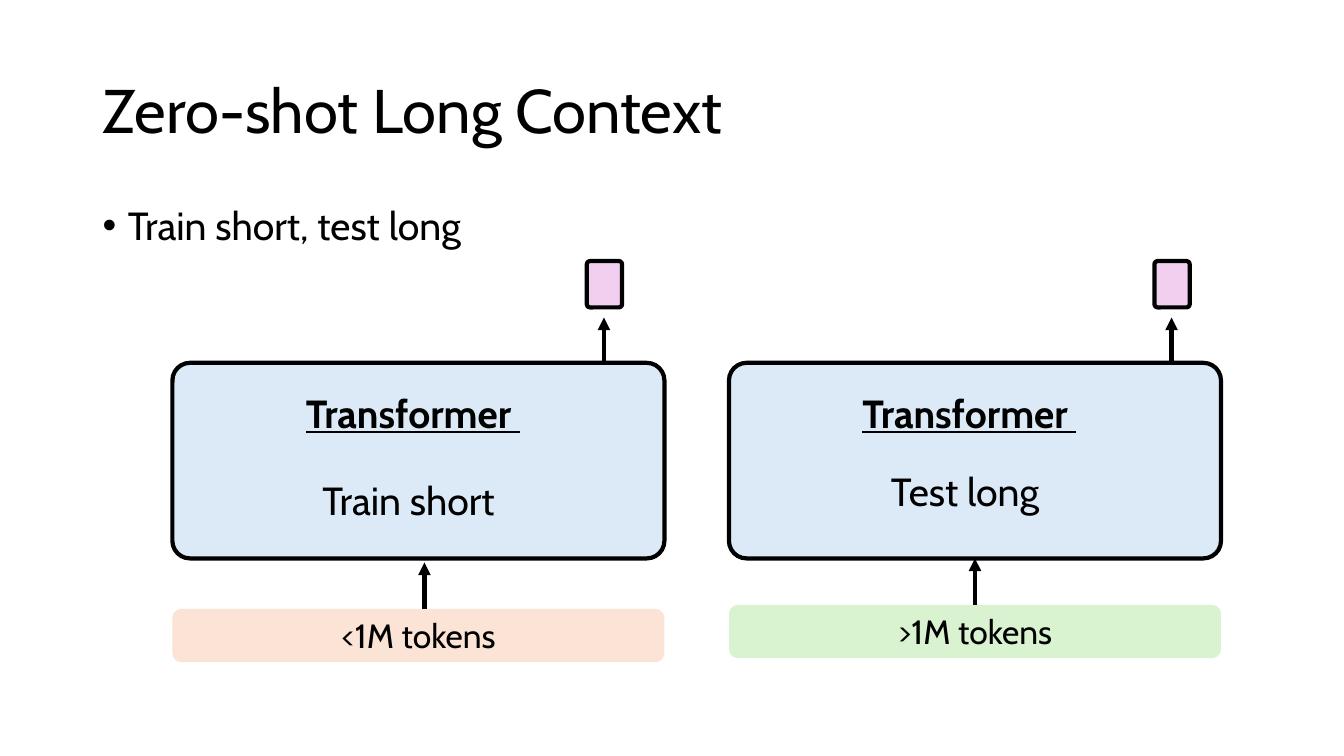
"""Build the "Zero-shot Long Context" slide: training short and testing long."""
from lxml.etree import SubElement
from pptx import Presentation
from pptx.dml.color import RGBColor
from pptx.enum.shapes import MSO_CONNECTOR, MSO_SHAPE
from pptx.enum.text import MSO_ANCHOR, MSO_AUTO_SIZE, PP_ALIGN
from pptx.oxml.ns import qn
from pptx.util import Emu, Pt

PX = 9144
BLACK = RGBColor(0x00, 0x00, 0x00)
BLUE = RGBColor(0xDC, 0xEA, 0xF7)
PINK = RGBColor(0xF2, 0xCF, 0xEE)
ORANGE = RGBColor(0xFB, 0xE3, 0xD6)
GREEN = RGBColor(0xD9, 0xF2, 0xD0)


def put_text(sp, text, size, align=PP_ALIGN.CENTER, anchor=MSO_ANCHOR.TOP):
    tf = sp.text_frame
    tf.word_wrap = True
    tf.auto_size = MSO_AUTO_SIZE.NONE
    tf.vertical_anchor = anchor
    tf.text = text
    p = tf.paragraphs[0]
    p.alignment = align
    r = p.runs[0]
    r.font.name = "Cabin"
    r.font.size = Pt(size)
    r.font.color.rgb = BLACK
    return p


def add_box(box, fill, outlined=True):
    sp = s.shapes.add_shape(MSO_SHAPE.ROUNDED_RECTANGLE, *[Emu(v * PX) for v in box])
    sp.shadow.inherit = False
    sp.fill.solid()
    sp.fill.fore_color.rgb = fill
    if outlined:
        sp.adjustments[0] = 0.09
        sp.line.color.rgb = BLACK
        sp.line.width = Pt(3)
    else:
        sp.line.fill.background()
    return sp


prs = Presentation()
prs.slide_width, prs.slide_height = Emu(1333 * PX), Emu(750 * PX)
s = prs.slides.add_slide(prs.slide_layouts[5])

title = s.shapes.title
title.left, title.top, title.width, title.height = [Emu(v * PX) for v in (92, 40, 1150, 145)]
p = put_text(title, "Zero-shot Long Context", 44, PP_ALIGN.LEFT, MSO_ANCHOR.MIDDLE)
p.line_spacing = 0.9

body = s.shapes.add_textbox(*[Emu(v * PX) for v in (92, 200, 1150, 476)])
p = put_text(body, "Train short, test long", 28, PP_ALIGN.LEFT)
p.line_spacing = 0.9
pPr = p._p.get_or_add_pPr()
pPr.set("marL", str(25 * PX))
pPr.set("indent", str(-25 * PX))
SubElement(pPr, qn("a:buFont")).set("typeface", "Arial")
SubElement(pPr, qn("a:buChar")).set("char", "•")

panels = [
    (171, "Train short ", 248, 468, "<1M tokens", 604, ORANGE, 421, 582),
    (723, "Test long ", 800, 459, ">1M tokens", 600, GREEN, 967, 1145),
]
for x, phase, phase_x, phase_y, tokens, tokens_y, color, arrow_x, output_x in panels:
    block = add_box((x, 360, 488, 194), BLUE)
    name = s.shapes.add_textbox(*[Emu(v * PX) for v in (x + 96, 381, 285, 57)])
    r = put_text(name, "Transformer ", 28).runs[0]
    r.font.bold = True
    r.font.underline = True
    label = s.shapes.add_textbox(*[Emu(v * PX) for v in (phase_x, phase_y, 323, 57)])
    put_text(label, phase, 28)
    bar = add_box((x, tokens_y, 488, 53), color, outlined=False)
    put_text(bar, tokens, 24, anchor=MSO_ANCHOR.MIDDLE)
    add_box((output_x, 259, 35, 46), PINK)

    for ax, start, end in ((arrow_x, tokens_y, tokens_y - 46), (output_x + 17, 360, 315)):
        arrow = s.shapes.add_connector(
            MSO_CONNECTOR.STRAIGHT, *[Emu(v * PX) for v in (ax, start, ax, end)])
        arrow.line.color.rgb = BLACK
        arrow.line.width = Pt(3)
        SubElement(arrow.line._get_or_add_ln(), qn("a:tailEnd")).set("type", "triangle")
        SubElement(arrow._element.spPr, qn("a:effectLst"))
        if ax == x + 244:
            arrow.begin_connect(bar, 0)
            arrow.end_connect(block, 2)

prs.save("out.pptx")
